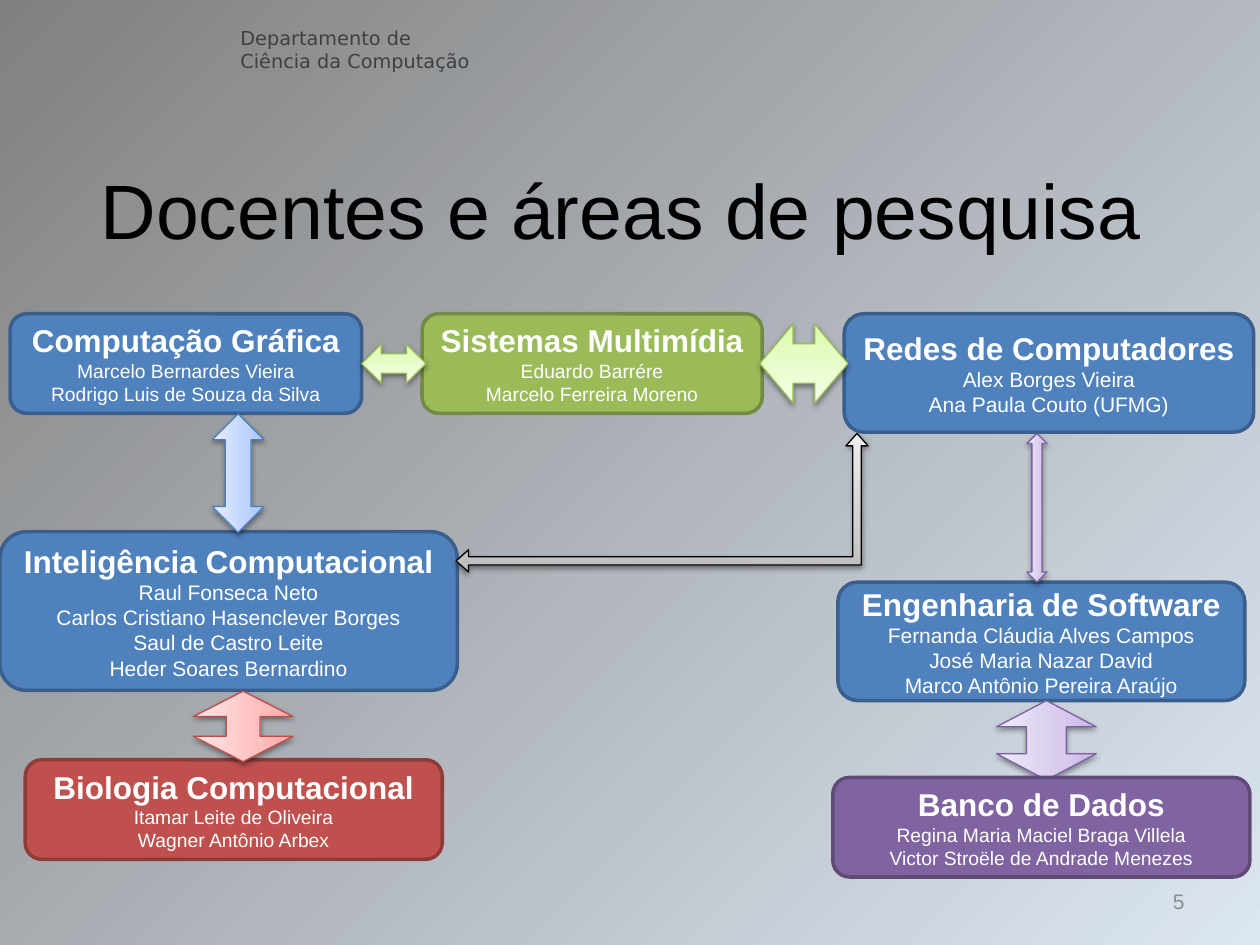
from copy import deepcopy
from lxml import etree
from pptx import Presentation
from pptx.dml.color import RGBColor
from pptx.enum.shapes import MSO_SHAPE as SHAPE
from pptx.enum.text import MSO_ANCHOR as ANCHOR, PP_ALIGN as ALIGN
from pptx.oxml import parse_xml
from pptx.oxml.ns import nsdecls, qn
from pptx.util import Inches, Pt

rgb = RGBColor.from_string
prs = Presentation()
prs.slide_width, prs.slide_height = Inches(10), Inches(7.5)
COL, ROW = prs.slide_width / 100, prs.slide_height / 75
s = prs.slides.add_slide(prs.slide_layouts[5])


def cells(x, y, w, h):
    return round(x * COL), round(y * ROW), round(w * COL), round(h * ROW)


def write(tf, text, size, color, head=None, font="Arial", align=ALIGN.CENTER, anchor=ANCHOR.MIDDLE):
    tf.word_wrap = True
    tf.vertical_anchor = anchor
    for i, line in enumerate(text.split("\n")):
        p = tf.paragraphs[0] if i == 0 else tf.add_paragraph()
        p.alignment = align
        r = p.add_run()
        r.text = line
        r.font.name = font
        r.font.bold = bool(head and i == 0)
        r.font.size = Pt(head if head and i == 0 else size)
        r.font.color.rgb = rgb(color)


bg = s.background.fill
bg.gradient()
bg.gradient_angle = 315
for stop, color in zip(bg.gradient_stops, ("808080", "DCE6F2")):
    stop.color.rgb = rgb(color)

sp = s.shapes.add_textbox(*cells(18.1, 1.6, 22.7, 4.7))
write(sp.text_frame, "Departamento de\nCiência da Computação", 11, "404040",
      font="DejaVu Sans", align=ALIGN.LEFT, anchor=ANCHOR.TOP)

title = s.shapes.title
title.left, title.top, title.width, title.height = cells(4.3, 10.7, 90, 11.8)
write(title.text_frame, "Docentes e áreas de pesquisa", 44, "000000")

sp = s.shapes.add_textbox(*cells(71.7, 69.5, 23.3, 4))
write(sp.text_frame, "5", 12, "8C8C8C", align=ALIGN.RIGHT)

blue, green = ("4F81BD", "3A5F8C"), ("9BBB59", "738A42")
red, purple = ("C0504D", "8E3B39"), ("8064A2", "5F4A78")
areas = [
    ((0.8, 24.9, 27.9, 7.9), blue, 11,
     "Computação Gráfica\nMarcelo Bernardes Vieira\nRodrigo Luis de Souza da Silva"),
    ((66.5, 46.2, 32.3, 9.4), blue, 12,
     "Engenharia de Software\nFernanda Cláudia Alves Campos\n"
     "José Maria Nazar David\nMarco Antônio Pereira Araújo"),
    ((0, 42.2, 36.3, 12.6), blue, 12,
     "Inteligência Computacional\nRaul Fonseca Neto\nCarlos Cristiano Hasenclever Borges\n"
     "Saul de Castro Leite\nHeder Soares Bernardino"),
    ((67, 24.9, 32.5, 9.4), blue, 12,
     "Redes de Computadores\nAlex Borges Vieira\nAna Paula Couto (UFMG)"),
    ((33.5, 24.9, 27, 7.9), green, 11,
     "Sistemas Multimídia\nEduardo Barrére\nMarcelo Ferreira Moreno"),
    ((2, 60.3, 33.1, 7.9), red, 11,
     "Biologia Computacional\nItamar Leite de Oliveira\nWagner Antônio Arbex"),
    ((66.1, 61.7, 33.1, 7.9), purple, 11,
     "Banco de Dados\nRegina Maria Maciel Braga Villela\nVictor Stroële de Andrade Menezes"),
]
for box, (fill, line), size, text in areas:
    area = s.shapes.add_shape(SHAPE.ROUNDED_RECTANGLE, *cells(*box))
    area.shadow.inherit = False
    area.fill.solid()
    area.fill.fore_color.rgb = rgb(fill)
    area.line.color.rgb = rgb(line)
    area.line.width = Pt(2)
    write(area.text_frame, text, size, "FFFFFF", head=18)

pink = ("FFA6A5", "FFC0BF", "FFE7E7", "BF4C48")
lime = ("DAFDA7", "E4FCC2", "F5FFE7", "98B955")
sky = ("A4C4FF", "BFD4FF", "E6EEFF", "4B7EBC")
lilac = ("C9B5E8", "D8CBEE", "F0EAF9", "7D60A0")
gray = ("BDBDBD", "D1D1D1", "EEEEEE", "000000")
double, corner = SHAPE.LEFT_RIGHT_ARROW, SHAPE.LEFT_UP_ARROW
shadow = parse_xml(
    f'<a:effectLst {nsdecls("a")}><a:outerShdw blurRad="40000" dist="20000" dir="5400000" rotWithShape="0">'
    '<a:srgbClr val="000000"><a:alpha val="38000"/></a:srgbClr></a:outerShdw></a:effectLst>')
arrows = [
    (double, (16.5, 53.7, 5.6, 7.9), 270, pink, (0.34, 0.36)),
    (double, (60.3, 25.7, 7, 6.3), 180, lime, (0.5, 0.42)),
    (double, (28.7, 27.3, 5.1, 3.1), 180, lime, (0.5, 0.5)),
    (double, (14.2, 35.5, 9.4, 4.1), 270, sky, (0.5, 0.5)),
    (double, (76.4, 39.5, 11.8, 1.6), 270, lilac, (0.5, 0.5)),
    (double, (79.9, 54.8, 6.3, 7.9), 270, lilac, (0.4, 0.33)),
    (corner, (36.2, 34.4, 32.7, 11), 0, gray, (0.06, 0.08, 0.09)),
]
for kind, box, angle, (*tones, line), adjust in arrows:
    sp = s.shapes.add_shape(kind, *cells(*box))
    sp.rotation = angle
    for i, value in enumerate(adjust):
        sp.adjustments[i] = value
    sp.fill.gradient()
    sp.fill.gradient_angle = 90
    stops = sp._element.spPr.find(".//" + qn("a:gsLst"))
    stops.insert(1, deepcopy(stops[0]))
    for stop, tone, place in zip(sp.fill.gradient_stops, tones, (0, 0.35, 1)):
        stop.color.rgb = rgb(tone)
        stop.position = place
    sp.line.color.rgb = rgb(line)
    sp.line.width = Pt(0.75)
    sp._element.spPr.append(deepcopy(shadow))

s.shapes._spTree.append(area._element)

prs.save("out.pptx")
